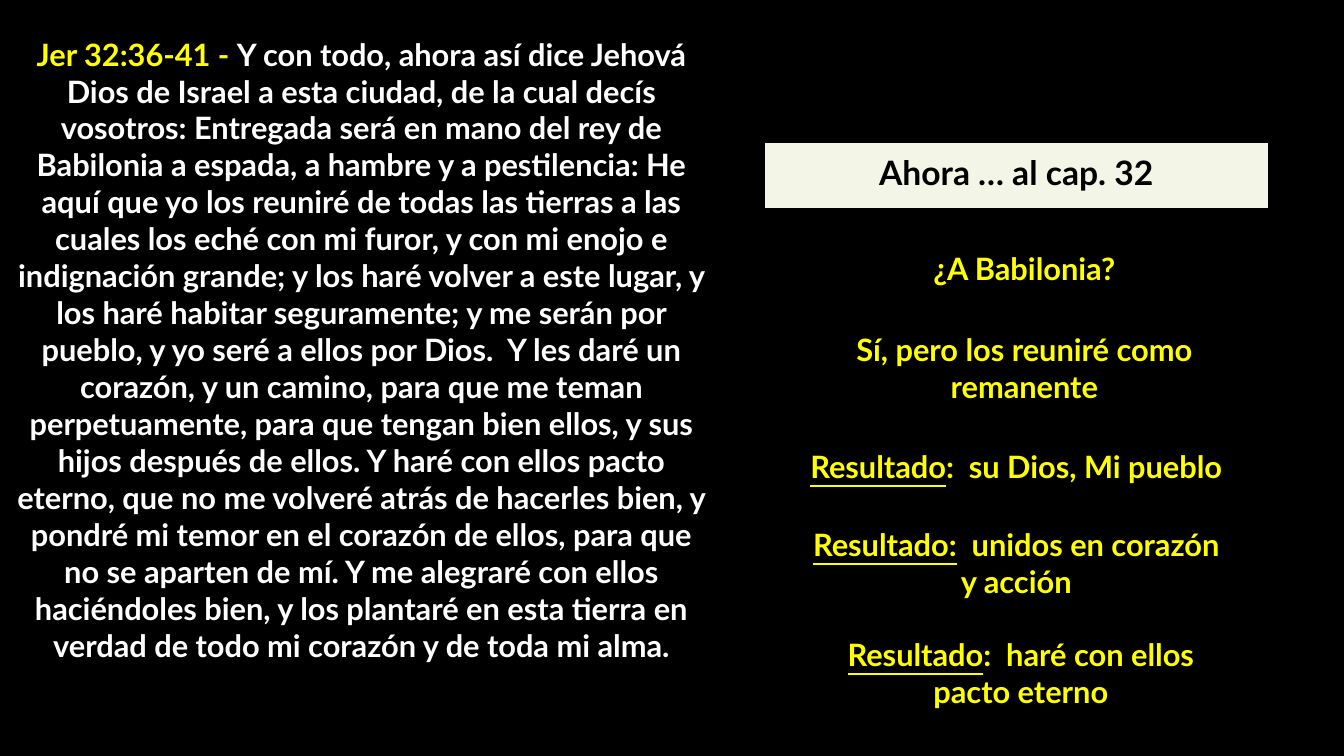
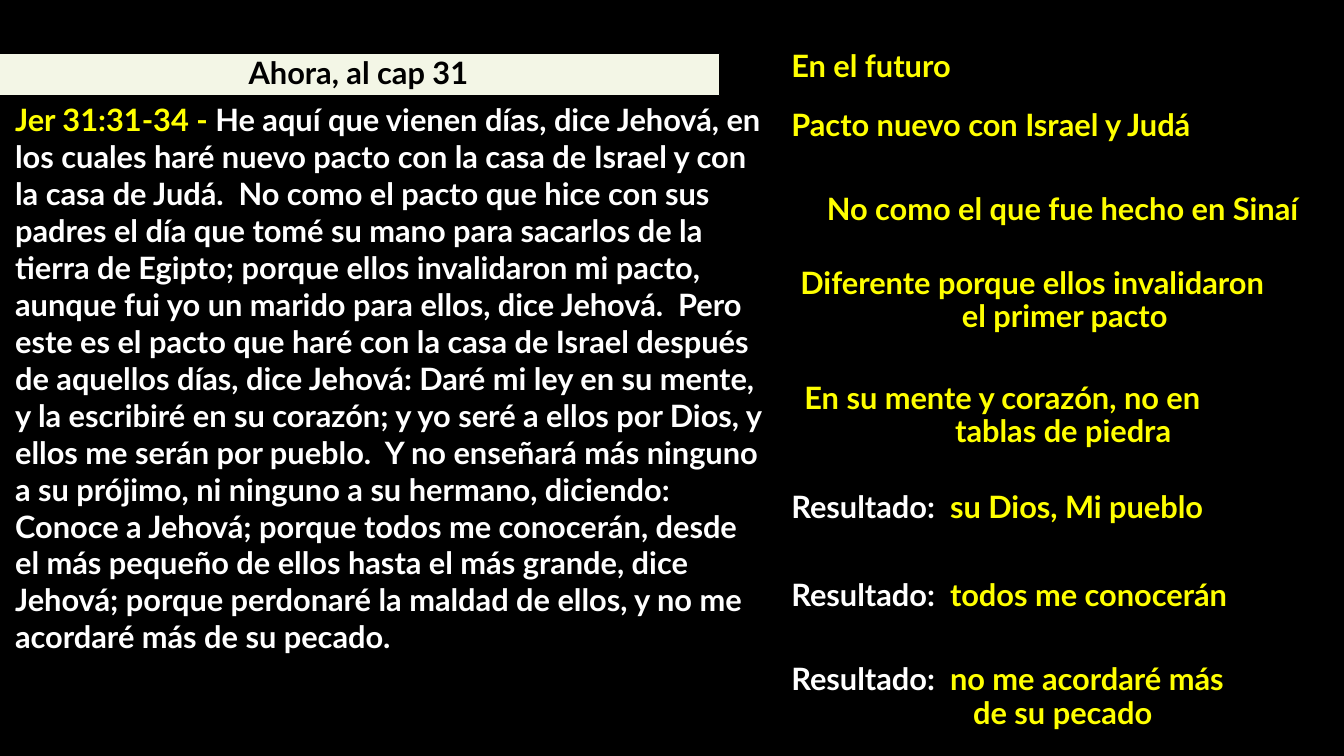
from lxml import etree
from pptx import Presentation
from pptx.dml.color import RGBColor
from pptx.enum.shapes import MSO_SHAPE
from pptx.enum.text import MSO_ANCHOR, MSO_AUTO_SIZE, PP_ALIGN
from pptx.oxml.ns import qn
from pptx.util import Inches, Pt

RECTANGLE = MSO_SHAPE.RECTANGLE
TOP, MIDDLE = MSO_ANCHOR.TOP, MSO_ANCHOR.MIDDLE
LEFT, CENTER = PP_ALIGN.LEFT, PP_ALIGN.CENTER
NO_AUTOFIT = MSO_AUTO_SIZE.NONE
BLACK, WHITE, YELLOW, CREAM = "000000", "FFFFFF", "FFFF00", "F3F6E6"


def color(value):
    return RGBColor.from_string(value)


class Lesson:
    font = {"name": "Lato", "size": Pt(22), "bold": True}
    frame = {"auto_size": NO_AUTOFIT, "vertical_anchor": MIDDLE, "word_wrap": False}

    def __init__(self):
        self.deck = Presentation()
        self.deck.slide_width = Inches(13.33)
        self.deck.slide_height = Inches(7.5)
        background = self.deck.slide_master.background.fill
        background.solid()
        background.fore_color.rgb = color(BLACK)
        self.page = None

    def new_page(self):
        self.page = self.deck.slides.add_slide(self.deck.slide_layouts[1])

    def place(self, shape, area):
        for name, value in zip(("left", "top", "width", "height"), area):
            setattr(shape, name, Inches(value))

    def outline(self, shape):
        shape.line.color.rgb = color(BLACK)
        shape.line.width = Pt(0.75)

    def set_text(self, shape, lines, **frame):
        text = shape.text_frame
        for name, value in {**self.frame, **frame}.items():
            setattr(text, name, value)
        for index, (align, spacing, spans) in enumerate(lines):
            para = text.add_paragraph() if index else text.paragraphs[0]
            settings = {"alignment": align, "line_spacing": spacing, "space_before": Pt(0)}
            for name, value in settings.items():
                setattr(para, name, value)
            for words, ink, extra in spans:
                span = para.add_run()
                span.text = words
                for name, value in {**self.font, **extra}.items():
                    setattr(span.font, name, value)
                span.font.color.rgb = color(ink)

    def title(self, area, words, size, spacing):
        shape = self.page.shapes.title
        self.place(shape, area)
        shape.fill.solid()
        shape.fill.fore_color.rgb = color(CREAM)
        self.outline(shape)
        self.set_text(shape, [(CENTER, spacing, [(words, BLACK, {"size": Pt(size)})])])

    def scripture(self, area, reference, words, align):
        shape = self.page.placeholders[1]
        self.place(shape, area)
        spans = [(reference, YELLOW, {}), (words, WHITE, {})]
        self.set_text(shape, [(align, 1.0, spans)], vertical_anchor=TOP, word_wrap=True)
        properties = shape.text_frame.paragraphs[0]._p.get_or_add_pPr()
        properties.set("marL", "0")
        properties.set("indent", "0")
        etree.SubElement(properties, qn("a:buNone"))

    def note(self, area, first, second="", label="", label_ink=YELLOW,
             underline=False, align=CENTER, spacing=0.9):
        shape = self.page.shapes.add_shape(RECTANGLE, 0, 0, 0, 0)
        self.place(shape, area)
        shape.shadow.inherit = False
        shape.fill.background()
        self.outline(shape)
        spans = [(label, label_ink, {"underline": underline})] if label else []
        lines = [(align, spacing, spans + [(first, YELLOW, {})])]
        if second:
            lines.append((CENTER, spacing, [(second, YELLOW, {})]))
        self.set_text(shape, lines)


def build_chapter_32(lesson):
    lesson.new_page()
    lesson.title((7.58, 1.41, 5, 0.66), "Ahora … al cap. 32", 24, 0.85)
    lesson.scripture(
        (0, 0.3, 7.17, 7.14),
        "Jer 32:36-41 - ",
        "Y con todo, ahora así dice Jehová Dios de Israel a esta ciudad, de la cual "
        "decís vosotros: Entregada será en mano del rey de Babilonia a espada, a hambre "
        "y a pestilencia: He aquí que yo los reuniré de todas las tierras a las cuales "
        "los eché con mi furor, y con mi enojo e indignación grande; y los haré volver a "
        "este lugar, y los haré habitar seguramente; y me serán por pueblo, y yo seré a "
        "ellos por Dios.  Y les daré un corazón, y un camino, para que me teman "
        "perpetuamente, para que tengan bien ellos, y sus hijos después de ellos. Y haré "
        "con ellos pacto eterno, que no me volveré atrás de hacerles bien, y pondré mi "
        "temor en el corazón de ellos, para que no se aparten de mí. Y me alegraré con "
        "ellos haciéndoles bien, y los plantaré en esta tierra en verdad de todo mi "
        "corazón y de toda mi alma.",
        CENTER,
    )
    lesson.note((7.66, 2.18, 5, 1), "¿A Babilonia?")
    lesson.note((7.66, 2.98, 5, 1.33), "Sí, pero los reuniré como", "remanente", spacing=1.0)
    results = [
        ((7.58, 4.23, 5, 0.83), "Resultado", ":  su Dios, Mi pueblo", "", 0.9),
        ((7.58, 5.08, 5, 1), "Resultado:", "  unidos en corazón", "y acción", 1.0),
        ((7.67, 6.17, 4.91, 1), "Resultado", ":  haré con ellos", "pacto eterno", 1.0),
    ]
    for area, label, first, second, spacing in results:
        lesson.note(area, first, second, label, underline=True, spacing=spacing)


def build_chapter_31(lesson):
    lesson.new_page()
    lesson.title((-0.03, 0.53, 7.17, 0.42), "Ahora, al cap 31", 22, 0.9)
    lesson.scripture(
        (0.05, 0.95, 7.67, 6.4),
        "Jer 31:31-34 - ",
        "He aquí que vienen días, dice Jehová, en los cuales haré nuevo pacto con la casa "
        "de Israel y con la casa de Judá.  No como el pacto que hice con sus padres el "
        "día que tomé su mano para sacarlos de la tierra de Egipto; porque ellos "
        "invalidaron mi pacto, aunque fui yo un marido para ellos, dice Jehová.  Pero "
        "este es el pacto que haré con la casa de Israel después de aquellos días, dice "
        "Jehová: Daré mi ley en su mente, y la escribiré en su corazón; y yo seré a ellos "
        "por Dios, y ellos me serán por pueblo.  Y no enseñará más ninguno a su prójimo, "
        "ni ninguno a su hermano, diciendo: Conoce a Jehová; porque todos me conocerán, "
        "desde el más pequeño de ellos hasta el más grande, dice Jehová; porque perdonaré "
        "la maldad de ellos, y no me acordaré más de su pecado.",
        LEFT,
    )
    promises = [
        ((7.75, 0.42, 3.92, 0.5), "En el futuro", "", LEFT),
        ((7.75, 0.92, 3.92, 0.67), "Pacto nuevo con Israel y Judá", "", LEFT),
        ((7.75, 1.75, 5.58, 0.67), "No como el que fue hecho en Sinaí", "", CENTER),
        ((7.84, 2.65, 5.44, 0.67), "Diferente porque ellos invalidaron", "el primer pacto", LEFT),
        ((7.88, 3.79, 5.33, 0.67), "En su mente y corazón, no en", "tablas de piedra", LEFT),
    ]
    for area, first, second, align in promises:
        lesson.note(area, first, second, align=align)
    results = [
        (4.83, 0.42, "su Dios, Mi pueblo", ""),
        (5.67, 0.5, "todos me conocerán", ""),
        (6.52, 0.8, "no me acordaré más", "de su pecado"),
    ]
    for top, height, first, second in results:
        lesson.note((7.75, top, 5.58, height), first, second, "Resultado:  ", WHITE, align=LEFT)


def main():
    lesson = Lesson()
    build_chapter_32(lesson)
    build_chapter_31(lesson)
    lesson.deck.save("out.pptx")


if __name__ == "__main__":
    main()
